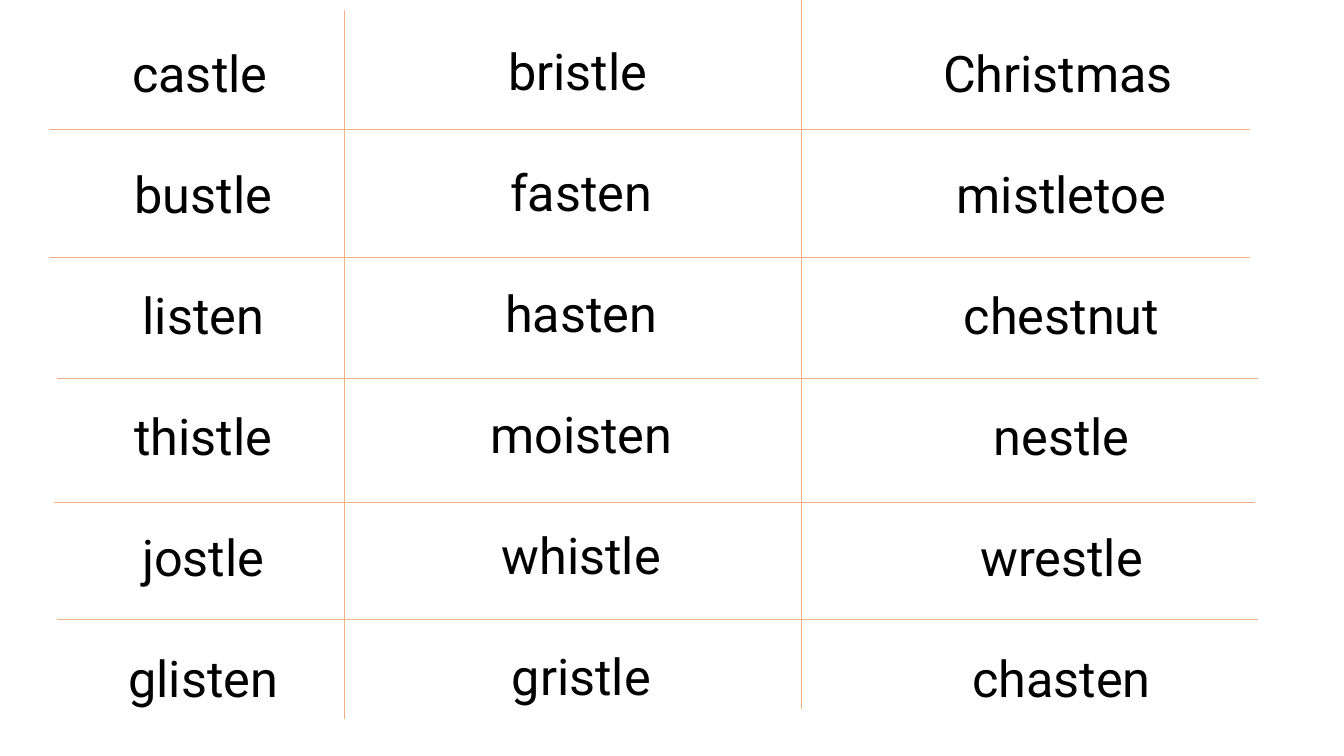
import pptx
import pptx.dml.color
import pptx.enum.shapes
import pptx.enum.text
import pptx.oxml.ns
import pptx.util
from dataclasses import dataclass
from lxml import etree

Pt = pptx.util.Pt
RGB = pptx.dml.color.RGBColor


@dataclass
class Theme:
    ink: RGB = RGB(0, 0, 0)
    rule: RGB = RGB(0xF4, 0xB1, 0x83)
    font: str = "Roboto"
    lead_font: str = "Noto Sans CJK JP"
    size: float = 36
    lead_size: float = 18
    line: float = 43
    gap: float = 43.4
    width: float = 0.5


THEME = Theme()

# Each column: box (left, top, width, height) and its words
COLUMNS = [
    ((35.3, 26.6, 211, 487.4),
     ["castle", "bustle", "listen", "thistle", "jostle", "glisten"]),
    ((305.3, 25.2, 211, 487.4),
     ["bristle", "fasten", "hasten", "moisten", "whistle", "gristle"]),
    ((595.4, 26.6, 316.8, 487.4),
     ["Christmas", "mistletoe", "chestnut", "nestle", "wrestle", "chasten"]),
]

# Upright rules: x, top; level rules: left, y
UPRIGHT = [(246.2, 7.2), (572.4, 0)]
LEVEL = [(35.3, 92.2), (35.3, 183.6), (41, 270), (38.9, 358.6), (41, 442.1)]
TALL, WIDE = 506.2, 857.5


def add_words(slide, box, words):
    frame = slide.shapes.add_textbox(*map(Pt, box)).text_frame
    frame.word_wrap = True
    for i, word in enumerate(words):
        para = frame.add_paragraph() if i else frame.paragraphs[0]
        para.alignment = pptx.enum.text.PP_ALIGN.CENTER
        para.font.name = THEME.font
        para.font.size = Pt(THEME.size)
        para.font.color.rgb = THEME.ink
        lead = para.add_run()
        lead.text = " "
        para.add_run().text = word
        if i:
            para.line_spacing = Pt(THEME.line)
            para.space_before = Pt(THEME.gap)
        else:
            # The top word has a narrower lead space
            lead.font.name = THEME.lead_font
            lead.font.size = Pt(THEME.lead_size)


def add_rule(slide, x, y, dx, dy):
    rule = slide.shapes.add_connector(
        pptx.enum.shapes.MSO_CONNECTOR.STRAIGHT,
        Pt(x), Pt(y), Pt(x + dx), Pt(y + dy))
    rule.line.color.rgb = THEME.rule
    rule.line.width = Pt(THEME.width)
    etree.SubElement(rule._element.spPr, pptx.oxml.ns.qn("a:effectLst"))


def add_grid(slide):
    for x, y in UPRIGHT:
        add_rule(slide, x, y, 0, TALL)
    for x, y in LEVEL:
        add_rule(slide, x, y, WIDE, 0)


def main():
    deck = pptx.Presentation()
    deck.slide_width, deck.slide_height = Pt(960), Pt(540)
    slide = deck.slides.add_slide(deck.slide_layouts[6])
    # Word columns, then the rules between them
    for box, words in COLUMNS:
        add_words(slide, box, words)
    add_grid(slide)
    deck.save("out.pptx")


if __name__ == "__main__":
    main()
